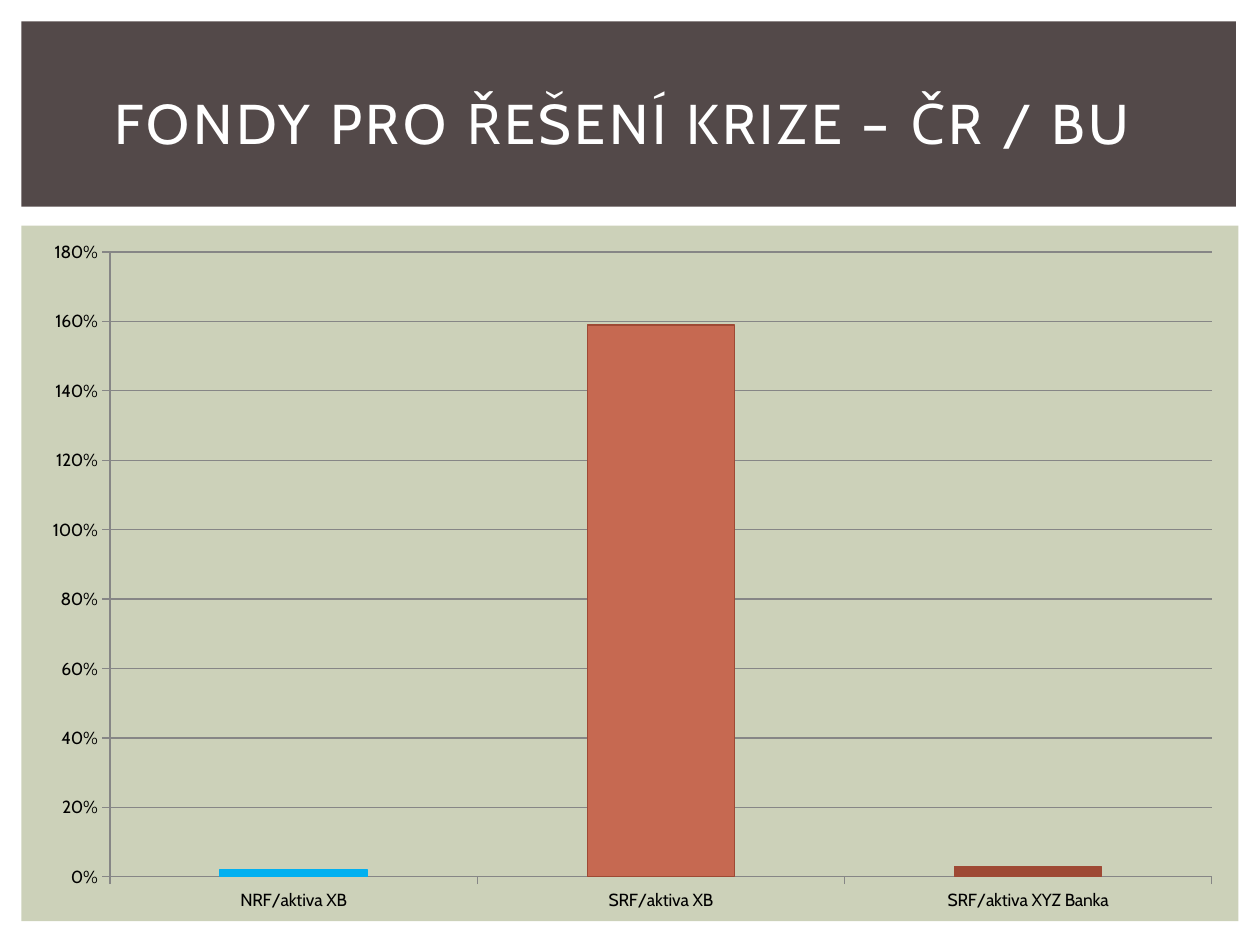
from lxml import etree
from pptx import Presentation
from pptx import util as u
from pptx.chart.data import CategoryChartData
from pptx.dml.color import RGBColor
from pptx.enum import chart as charts, shapes, text
from pptx.oxml import parse_xml
from pptx.oxml.ns import nsdecls

FONT = "Cabin"
AXIS_GREY = "868686"
RUST = "9E4934"
FUNDS = {"NRF/aktiva XB": 0.02, "SRF/aktiva XB": 1.59, "SRF/aktiva XYZ Banka": 0.03}
BAR_COLOURS = ["00B0F0", "C66951", RUST]
PLOT_AREA = {"x": 0.07, "y": 0.04, "w": 0.91, "h": 0.9}


def rgb(value):
    """Turn a hex string into a colour."""
    return RGBColor.from_string(value)


def style_font(font, size, colour):
    """Set the typeface, size and colour of a font."""
    font.name, font.size = FONT, u.Pt(size)
    font.color.rgb = rgb(colour)


def style_line(line, colour, width=0.75):
    """Set the colour and width of a line."""
    line.color.rgb, line.width = rgb(colour), u.Pt(width)


def add_panel(slide, left, top, width, height, colour):
    """Draw a plain filled rectangle."""
    panel = slide.shapes.add_shape(
        shapes.MSO_SHAPE.RECTANGLE,
        u.Inches(left), u.Inches(top), u.Inches(width), u.Inches(height))
    panel.shadow.inherit = False
    panel.fill.solid()
    panel.fill.fore_color.rgb = rgb(colour)
    panel.line.fill.background()


def add_header(slide, left, top, width, height):
    """Draw the dark band with the title."""
    add_panel(slide, left, top, width, height, "534949")
    heading = slide.shapes.add_textbox(
        u.Inches(left + 0.25), u.Inches(top + 0.22),
        u.Inches(width - 0.47), u.Inches(height - 0.32)).text_frame
    heading.word_wrap = True
    heading.vertical_anchor = text.MSO_ANCHOR.MIDDLE
    paragraph = heading.paragraphs[0]
    paragraph.alignment = text.PP_ALIGN.CENTER
    run = paragraph.add_run()
    run.text = "FONDY PRO ŘEŠENÍ KRIZE – ČR / BU "
    style_font(run.font, 32, "FFFFFF")
    run.font._element.set("spc", "200")


def fix_plot_area(chart):
    """Pin the inner plot area to fractions of the chart frame."""
    plot_area = chart._chartSpace.chart.plotArea
    for old in plot_area.findall("{*}layout"):
        plot_area.remove(old)
    layout = parse_xml(f"<c:layout {nsdecls('c')}><c:manualLayout/></c:layout>")
    settings = {"layoutTarget": "inner", "xMode": "edge", "yMode": "edge", **PLOT_AREA}
    for tag, value in settings.items():
        etree.SubElement(layout[0], f"{{{layout.nsmap['c']}}}{tag}", val=str(value))
    plot_area.insert(0, layout)


def add_fund_chart(slide, left, top, width, height):
    """Draw the green panel with the column chart of the funds."""
    add_panel(slide, left, top, width, height, "CCD1B9")
    funds = CategoryChartData(number_format="0%")
    funds.categories = list(FUNDS)
    funds.add_series("Series 1", list(FUNDS.values()))
    chart = slide.shapes.add_chart(
        charts.XL_CHART_TYPE.COLUMN_CLUSTERED,
        u.Inches(left + 0.03), u.Inches(top - 0.01),
        u.Inches(width - 0.05), u.Inches(height - 0.01), funds).chart
    chart.has_legend = chart.has_title = False
    style_font(chart.font, 10, "000000")
    fix_plot_area(chart)

    percent = chart.value_axis
    percent.minimum_scale, percent.maximum_scale, percent.major_unit = 0, 1.8, 0.2
    percent.tick_labels.number_format = "0%"
    percent.tick_labels.number_format_is_linked = False
    style_line(percent.major_gridlines.format.line, AXIS_GREY)
    for axis in (percent, chart.category_axis):
        axis.major_tick_mark = charts.XL_TICK_MARK.OUTSIDE
        style_line(axis.format.line, AXIS_GREY)

    plot = chart.plots[0]
    plot.gap_width, plot.vary_by_categories = 150, False
    for index, colour in enumerate(BAR_COLOURS):
        bar = plot.series[0].points[index].format
        bar.fill.solid()
        bar.fill.fore_color.rgb = rgb(colour)
        style_line(bar.line, RUST if index == 1 else colour)


def main():
    """Build and save the slide."""
    deck = Presentation()
    deck.slide_width, deck.slide_height = u.Inches(10), u.Inches(7.5)
    slide = deck.slides.add_slide(deck.slide_layouts[6])
    add_header(slide, 0.17, 0.17, 9.64, 1.47)
    add_fund_chart(slide, 0.17, 1.79, 9.66, 5.52)
    deck.save("out.pptx")


if __name__ == "__main__":
    main()
